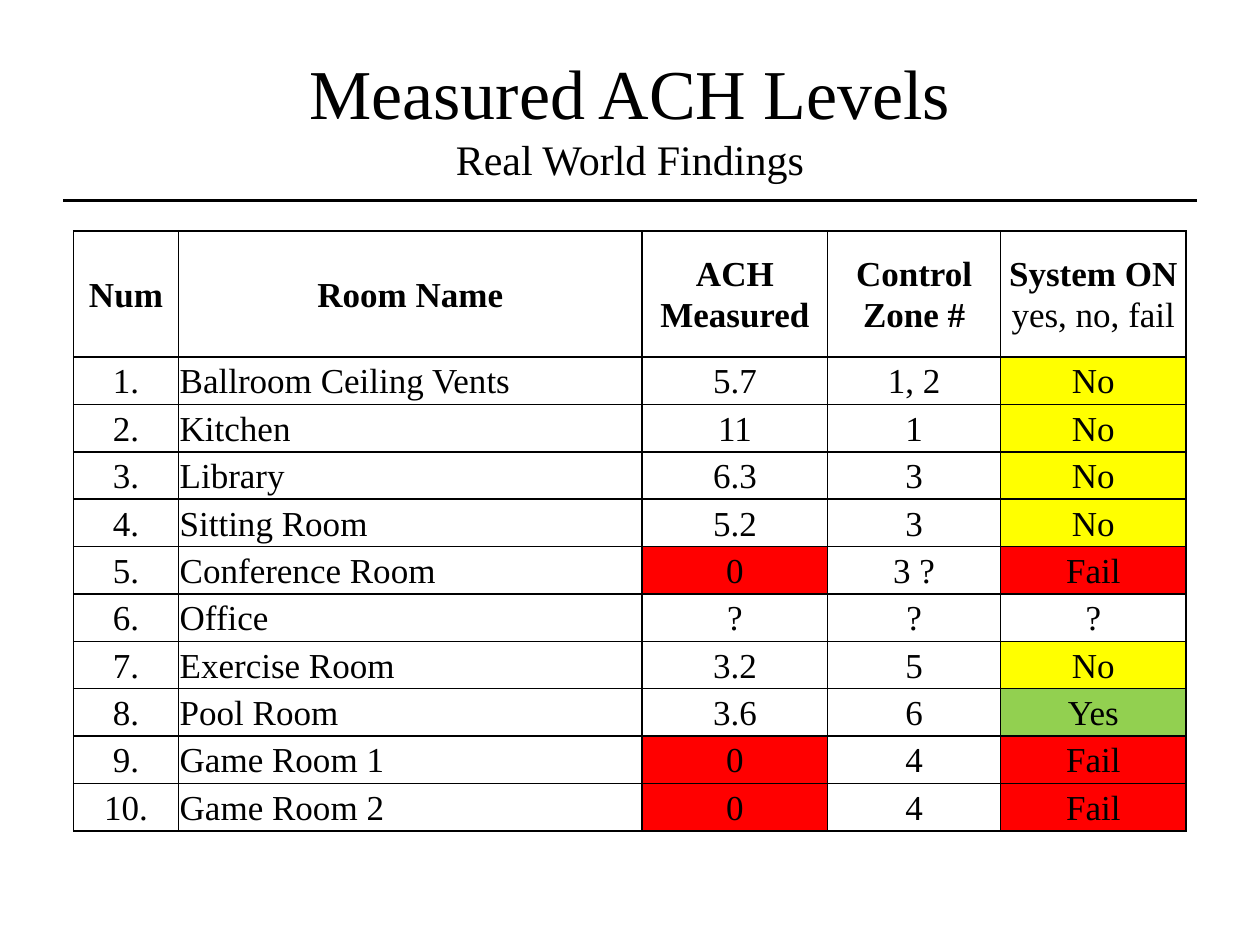
from dataclasses import dataclass

from lxml.etree import SubElement
from pptx import Presentation
from pptx.dml.color import RGBColor as Color
from pptx.enum.shapes import MSO_CONNECTOR as Connector
from pptx.enum.text import MSO_ANCHOR as Anchor, PP_ALIGN as Align
from pptx.oxml.ns import qn
from pptx.util import Pt


@dataclass(frozen=True)
class Theme:
    font: str = "Times New Roman"
    ink: str = "000000"
    yellow: str = "FFFF00"
    red: str = "FF0000"
    green: str = "92D050"
    title: int = 40
    subtitle: int = 24
    body: int = 20


theme = Theme()


def style_run(span, size, bold=False):
    span.font.name = theme.font
    span.font.size = Pt(size)
    span.font.bold = bold
    span.font.color.rgb = Color.from_string(theme.ink)


def add_borders(cell):
    properties = cell._tc.get_or_add_tcPr()
    for side in ("a:lnL", "a:lnR", "a:lnT", "a:lnB"):
        border = SubElement(properties, qn(side), w=str(Pt(1)))
        fill = SubElement(border, qn("a:solidFill"))
        SubElement(fill, qn("a:srgbClr"), val=theme.ink)


deck = Presentation()
deck.slide_width, deck.slide_height = Pt(720), Pt(540)
page = deck.slides.add_slide(deck.slide_layouts[6])

# Rule under the title
rule = page.shapes.add_connector(Connector.STRAIGHT, Pt(36), Pt(114.5), Pt(684), Pt(114.5))
rule.line.color.rgb = Color.from_string(theme.ink)
rule.line.width = Pt(2)
SubElement(rule._element.spPr, qn("a:effectLst"))

# Title and subtitle
box = page.shapes.add_textbox(Pt(36), Pt(21.6), Pt(648), Pt(90))
frame = box.text_frame
frame.word_wrap = True
frame.vertical_anchor = Anchor.MIDDLE
frame.text = "Measured ACH Levels\vReal World Findings"
para = frame.paragraphs[0]
para.alignment = Align.CENTER
for span, size in zip(para.runs, (theme.title, theme.subtitle)):
    style_run(span, size)

# Table contents
header = ("Num", "Room Name", "ACH\nMeasured", "Control\vZone #", "System ON\nyes, no, fail")
rooms = [
    ("Ballroom Ceiling Vents", "5.7", "1, 2", "No"),
    ("Kitchen", "11", "1", "No"),
    ("Library", "6.3", "3", "No"),
    ("Sitting Room", "5.2", "3", "No"),
    ("Conference Room", "0", "3 ?", "Fail"),
    ("Office", "?", "?", "?"),
    ("Exercise Room", "3.2", "5", "No"),
    ("Pool Room", "3.6", "6", "Yes"),
    ("Game Room 1", "0", "4", "Fail"),
    ("Game Room 2", "0", "4", "Fail"),
]
rows = [header] + [(f"{number}.", *room) for number, room in enumerate(rooms, 1)]
status_fills = {"No": theme.yellow, "Fail": theme.red, "Yes": theme.green, "0": theme.red}
column_widths = (60, 265, 106, 98.8, 106)
header_height, row_height = 72, 25

# Table grid
table = page.shapes.add_table(
    len(rows), len(header), Pt(42), Pt(132), Pt(sum(column_widths)),
    Pt(header_height + row_height * len(rooms)),
).table
table.first_row = table.horz_banding = False
for column, width in zip(table.columns, column_widths):
    column.width = Pt(width)
for index, row in enumerate(table.rows):
    row.height = Pt(row_height if index else header_height)

# Table cells
for row_index, values in enumerate(rows):
    for column_index, value in enumerate(values):
        cell = table.cell(row_index, column_index)
        cell.text = value
        cell.vertical_anchor = Anchor.MIDDLE
        cell.margin_left = cell.margin_right = Pt(0.7)
        cell.margin_top = cell.margin_bottom = Pt(0.7)
        add_borders(cell)
        if value in status_fills:
            cell.fill.solid()
            cell.fill.fore_color.rgb = Color.from_string(status_fills[value])
        else:
            cell.fill.background()
        is_room_name = row_index > 0 and column_index == 1
        for para in cell.text_frame.paragraphs:
            para.alignment = Align.LEFT if is_room_name else Align.CENTER
            para.line_spacing = 1.07
            for span in para.runs:
                style_run(span, theme.body, row_index == 0 and span.text != "yes, no, fail")

deck.save("out.pptx")
